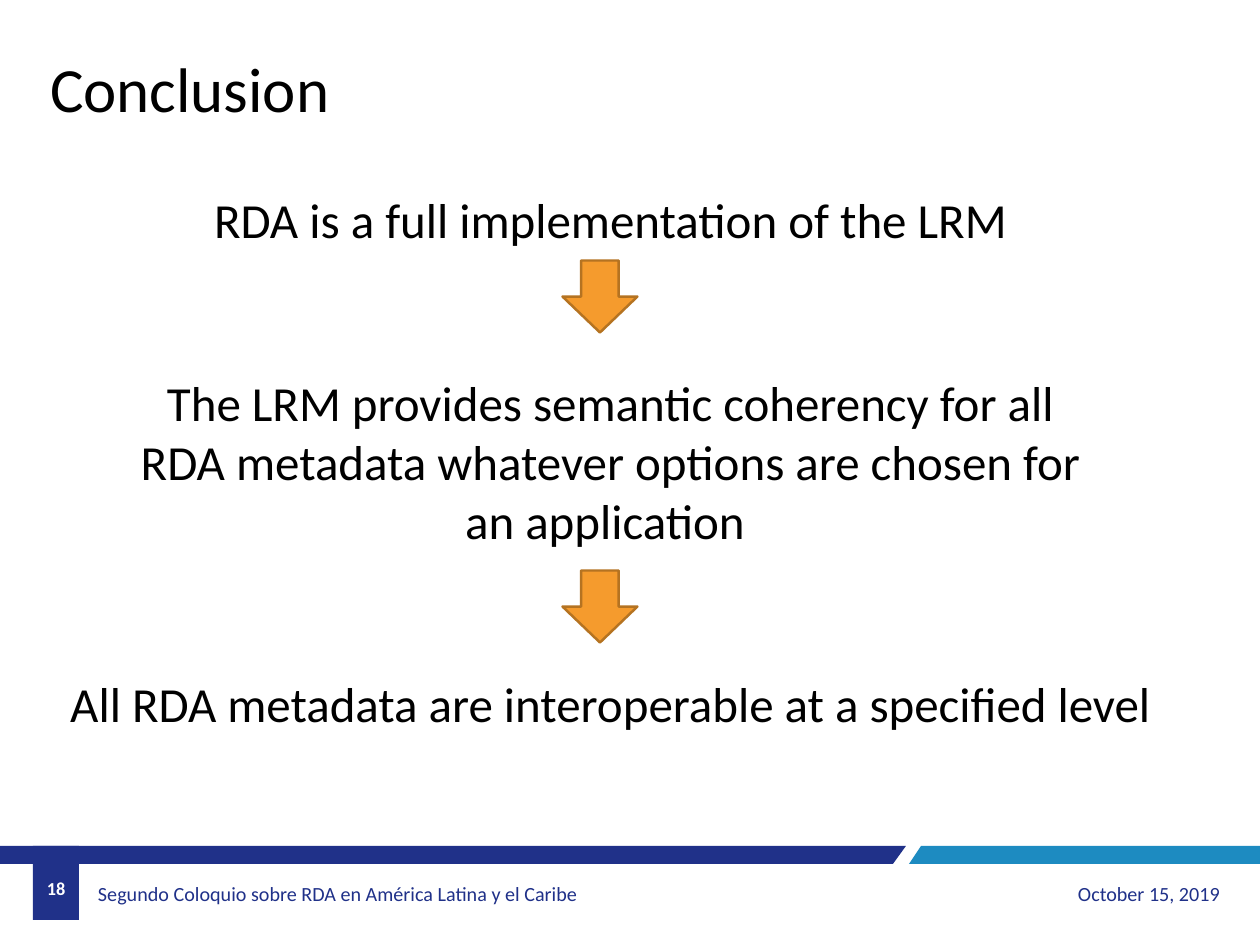
from dataclasses import dataclass

from pptx import Presentation
from pptx.dml.color import RGBColor
from pptx.enum.shapes import MSO_SHAPE as Shape
from pptx.enum.text import MSO_ANCHOR as Anchor, MSO_AUTO_SIZE as AutoSize, PP_ALIGN as Align
from pptx.util import Emu, Pt

EMU_PER_PX = 10367


@dataclass(frozen=True)
class Theme:
    font: str = "Calibri"
    navy: str = "203189"
    blue: str = "1D8BC1"
    orange: str = "F59B2D"
    brown: str = "B57321"
    black: str = "000000"
    white: str = "FFFFFF"
    title: float = 51.4
    body: float = 40
    footer: float = 16.4
    number: float = 14.9
    arrow_line: float = 2


THEME = Theme()


@dataclass(frozen=True)
class Label:
    text: str
    area: tuple[int, int, int, int]
    size: float
    color: str = THEME.black
    align: Align = Align.CENTER
    anchor: Anchor = Anchor.TOP
    wrap: bool = False
    grow: bool = True
    side_inset: int = 9
    bold: bool = False


@dataclass(frozen=True)
class Band:
    points: tuple[tuple[int, int], ...]
    color: str


BAND_TOP, BAND_BOTTOM = 846, 864
PAGE_WIDTH, PAGE_HEIGHT = 1260, 945
FOOTER_TOP, FOOTER_HEIGHT = 869, 49
TAB_LEFT, TAB_WIDTH, TAB_HEIGHT = 33, 46, 74
ARROW_LEFT, ARROW_WIDTH, ARROW_HEIGHT = 564, 72, 75
ARROW_TOPS = (259, 569)

BANDS = (
    Band(((906, BAND_TOP), (0, BAND_TOP), (0, BAND_BOTTOM), (893, BAND_BOTTOM)), THEME.navy),
    Band(((PAGE_WIDTH, BAND_TOP), (921, BAND_TOP), (909, BAND_BOTTOM), (PAGE_WIDTH, BAND_BOTTOM)), THEME.blue),
)

LABELS = (
    Label("Segundo Coloquio sobre RDA en América Latina y el Caribe",
          (92, FOOTER_TOP, 501, FOOTER_HEIGHT), THEME.footer, THEME.navy,
          Align.LEFT, Anchor.MIDDLE, wrap=True, grow=False, side_inset=6),
    Label("October 15, 2019", (906, FOOTER_TOP, 323, FOOTER_HEIGHT), THEME.footer, THEME.navy,
          Align.RIGHT, Anchor.MIDDLE, wrap=True, grow=False),
    Label("18", (TAB_LEFT, BAND_BOTTOM, TAB_WIDTH, FOOTER_HEIGHT), THEME.number, THEME.white,
          anchor=Anchor.MIDDLE, wrap=True, grow=False, bold=True),
    Label("Conclusion", (41, 46, 300, 86), THEME.title, align=Align.LEFT),
    Label("RDA is a full implementation of the LRM", (201, 186, 819, 68), THEME.body),
    Label("The LRM provides semantic coherency for all RDA metadata whatever options "
          "are chosen for an application ", (118, 369, 985, 187), THEME.body, wrap=True),
    Label("All RDA metadata are interoperable at a specified level", (56, 670, 1109, 68), THEME.body),
)


def px(length: int) -> Emu:
    return Emu(length * EMU_PER_PX)


def paint(shape, fill: str, line: str | None = None) -> None:
    shape.shadow.inherit = False
    shape.fill.solid()
    shape.fill.fore_color.rgb = RGBColor.from_string(fill)
    if line is None:
        shape.line.fill.background()
    else:
        shape.line.color.rgb = RGBColor.from_string(line)
        shape.line.width = Pt(THEME.arrow_line)


def draw_band(page, band: Band) -> None:
    start, *rest = band.points
    builder = page.shapes.build_freeform(*start, scale=EMU_PER_PX)
    builder.add_line_segments(rest, close=True)
    paint(builder.convert_to_shape(), band.color)


def draw_tab(page) -> None:
    tab = page.shapes.add_shape(
        Shape.RECTANGLE, px(TAB_LEFT), px(BAND_TOP), px(TAB_WIDTH), px(TAB_HEIGHT))
    paint(tab, THEME.navy)


def draw_label(page, label: Label) -> None:
    box = page.shapes.add_textbox(*map(px, label.area))
    frame = box.text_frame
    frame.text = label.text
    frame.word_wrap = label.wrap
    frame.auto_size = AutoSize.SHAPE_TO_FIT_TEXT if label.grow else AutoSize.NONE
    frame.vertical_anchor = label.anchor
    frame.margin_left = frame.margin_right = px(label.side_inset)
    frame.margin_top = frame.margin_bottom = px(4)
    para = frame.paragraphs[0]
    para.alignment = label.align
    for span in para.runs:
        span.font.name = THEME.font
        span.font.size = Pt(label.size)
        span.font.bold = label.bold
        span.font.color.rgb = RGBColor.from_string(label.color)


def draw_arrow(page, top: int) -> None:
    arrow = page.shapes.add_shape(
        Shape.LEFT_ARROW, px(ARROW_LEFT), px(top), px(ARROW_WIDTH), px(ARROW_HEIGHT))
    arrow.rotation = 270
    paint(arrow, THEME.orange, THEME.brown)


def main() -> None:
    deck = Presentation()
    deck.slide_width, deck.slide_height = px(PAGE_WIDTH), px(PAGE_HEIGHT)
    page = deck.slides.add_slide(deck.slide_layouts[6])
    for band in BANDS:
        draw_band(page, band)
    draw_tab(page)
    for label in LABELS:
        draw_label(page, label)
    for top in ARROW_TOPS:
        draw_arrow(page, top)
    deck.save("out.pptx")


if __name__ == "__main__":
    main()
